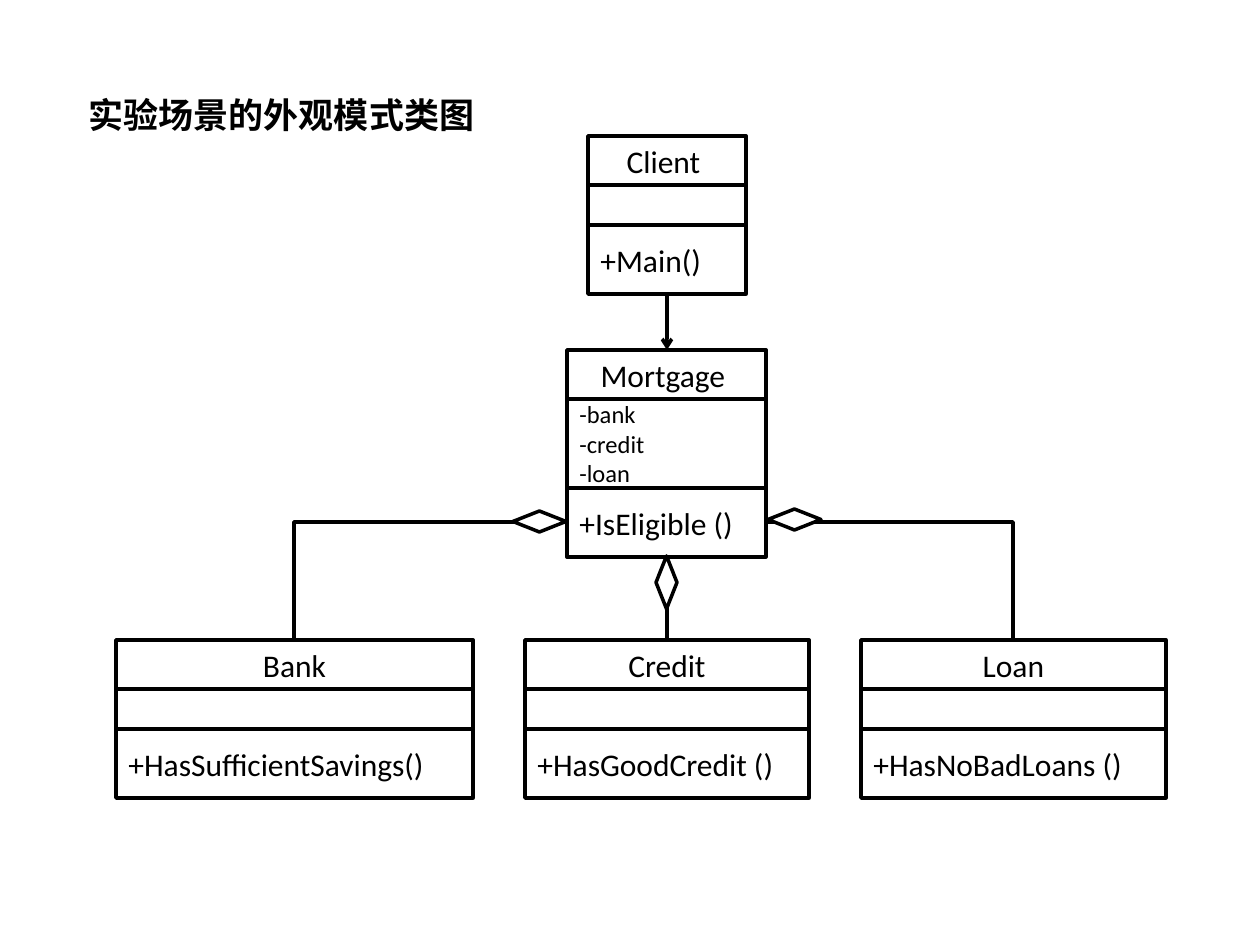
from lxml import etree
from pptx import Presentation
from pptx import util as u
from pptx.dml.color import RGBColor
from pptx.enum import shapes, text
from pptx.oxml.ns import qn

PX = 914400 / 126
INK, PAPER = "000000", "FFFFFF"
HEAD, FOOT = 49, 69
LEFT, MID = text.PP_ALIGN.LEFT, text.PP_ALIGN.CENTER


def px(*vals):
    """Turn pixel lengths into EMU."""
    return [u.Emu(round(v * PX)) for v in vals]


def hue(code):
    """Turn a hex string into a colour."""
    return RGBColor.from_string(code)


def put(item, vals):
    """Set each attribute held in a dict."""
    for name, val in vals.items():
        setattr(item, name, val)


def write(frame, lines, size, align=LEFT, bold=False):
    """Write lines of text into a frame."""
    for n, line in enumerate(lines):
        para = frame.add_paragraph() if n else frame.paragraphs[0]
        para.alignment = align
        run = para.add_run()
        run.text = line
        put(run.font, {"name": "Calibri", "size": u.Pt(size), "bold": bold})
        run.font.color.rgb = hue(INK)


def stroke(line):
    """Give a line the ink colour and weight."""
    line.color.rgb = hue(INK)
    line.width = u.Pt(2)


def form(tree, kind, box):
    """Add a white outlined shape in the box."""
    shape = tree.add_shape(kind, *px(*box))
    shape.shadow.inherit = False
    shape.fill.solid()
    shape.fill.fore_color.rgb = hue(PAPER)
    stroke(shape.line)
    return shape


def entity(slide, box, name, fields, call):
    """Draw a class of three stacked cells in the box."""
    left, top, wide, high = box
    group = slide.shapes.add_group_shape()
    body = high - HEAD - FOOT
    cells = [(HEAD, [name], 18, MID), (body, fields, 14, LEFT), (FOOT, [call], 18, LEFT)]
    for tall, lines, size, align in cells:
        cell = form(group.shapes, shapes.MSO_SHAPE.RECTANGLE, (left, top, wide, tall))
        frame = cell.text_frame
        put(frame, {"word_wrap": False, "vertical_anchor": text.MSO_ANCHOR.MIDDLE})
        write(frame, lines, size, align)
        top += tall


def link(slide, ends, bent=False, arrow=False):
    """Join two points, with a corner or an arrowhead if asked."""
    kind = shapes.MSO_CONNECTOR.ELBOW if bent else shapes.MSO_CONNECTOR.STRAIGHT
    wire = slide.shapes.add_connector(kind, *px(*ends))
    stroke(wire.line)
    prop = wire.element.spPr
    if bent:
        prop.find(qn("a:prstGeom")).set("prst", "bentConnector2")
    if arrow:
        etree.SubElement(prop.find(qn("a:ln")), qn("a:tailEnd"), type="arrow")
    etree.SubElement(prop, qn("a:effectLst"))


def gem(slide, box, turn=0):
    """Draw an aggregation diamond in the box."""
    form(slide.shapes, shapes.MSO_SHAPE.FLOWCHART_DECISION, box).rotation = turn


def title(slide, box, words):
    """Place and fill the title."""
    head = slide.shapes.title
    put(head, dict(zip(("left", "top", "width", "height"), px(*box))))
    put(head.text_frame, {"word_wrap": False, "vertical_anchor": text.MSO_ANCHOR.TOP,
                          "auto_size": text.MSO_AUTO_SIZE.SHAPE_TO_FIT_TEXT})
    write(head.text_frame, [words], 20, bold=True)


def chart(slide):
    """Draw the classes and their relations."""
    mid, fork, base = 667, 522, 640
    entity(slide, (567, 350, 199, 207), "Mortgage ", ["-bank", "-credit", "-loan"], "+IsEligible ()")
    parts = [(116, 357, "Bank", "+HasSufficientSavings()"),
             (525, 284, "Credit", "+HasGoodCredit ()"),
             (861, 305, "Loan", "+HasNoBadLoans ()")]
    for left, wide, name, call in parts:
        entity(slide, (left, base, wide, 158), name, [], call)
    entity(slide, (588, 136, 158, 158), "Client ", [], "+Main()")
    link(slide, (567, fork, 294, base), bent=True)
    link(slide, (mid, 557, mid, base))
    link(slide, (766, fork, 1013, base), bent=True)
    link(slide, (mid, 294, mid, 350), arrow=True)
    gem(slide, (513, 511, 53, 21))
    gem(slide, (768, 509, 53, 21))
    gem(slide, (640, 572, 53, 21), 90)


def main():
    """Build and save the slide."""
    deck = Presentation()
    put(deck, dict(zip(("slide_width", "slide_height"), px(1260, 945))))
    slide = deck.slides.add_slide(deck.slide_layouts[5])
    title(slide, (76, 87, 436, 55), "实验场景的外观模式类图")
    chart(slide)
    deck.save("out.pptx")


if __name__ == "__main__":
    main()
